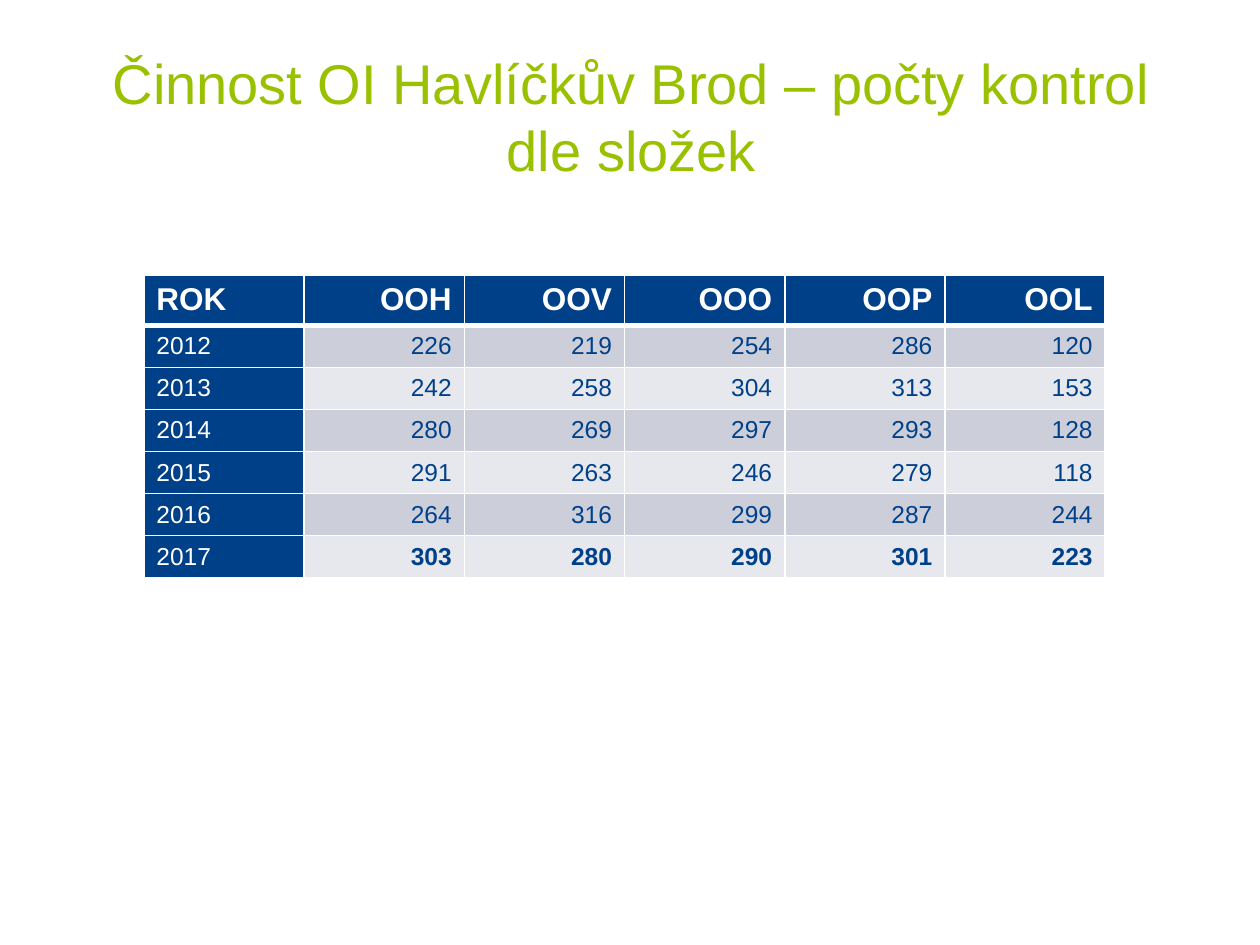
from lxml import etree
from pptx import Presentation
from pptx.dml.color import RGBColor
from pptx.enum.text import MSO_ANCHOR, PP_ALIGN
from pptx.oxml.ns import qn
from pptx.util import Cm, Pt

MIDDLE = MSO_ANCHOR.MIDDLE
LEFT, CENTER, RIGHT = PP_ALIGN.LEFT, PP_ALIGN.CENTER, PP_ALIGN.RIGHT

GREEN = RGBColor(0x99, 0xC1, 0x00)
BLUE = RGBColor(0x00, 0x40, 0x89)
WHITE = RGBColor(0xFF, 0xFF, 0xFF)
DARK_BAND = RGBColor(0xCC, 0xCF, 0xDA)
LIGHT_BAND = RGBColor(0xE7, 0xE8, 0xED)

INSPECTIONS = [
    ("ROK", "OOH", "OOV", "OOO", "OOP", "OOL"),
    ("2012", "226", "219", "254", "286", "120"),
    ("2013", "242", "258", "304", "313", "153"),
    ("2014", "280", "269", "297", "293", "128"),
    ("2015", "291", "263", "246", "279", "118"),
    ("2016", "264", "316", "299", "287", "244"),
    ("2017", "303", "280", "290", "301", "223"),
]
ROW_COUNT, COLUMN_COUNT = len(INSPECTIONS), len(INSPECTIONS[0])
LAST_ROW = ROW_COUNT - 1
COLUMN_WIDTH, ROW_HEIGHT = Cm(3.23), Cm(0.76)


def style_text(paragraph, size, color, alignment, bold=False):
    paragraph.alignment = alignment
    paragraph.font.name = "Arial"
    paragraph.font.size = Pt(size)
    paragraph.font.bold = bold
    paragraph.font.color.rgb = color


def set_borders(cell, widths):
    """Draw white cell borders; widths maps an edge tag to points."""
    properties = cell._tc.get_or_add_tcPr()
    for position, (edge, width) in enumerate(widths.items()):
        line = etree.Element(qn(edge), w=str(Pt(width)))
        fill = etree.SubElement(line, qn("a:solidFill"))
        etree.SubElement(fill, qn("a:srgbClr"), val=str(WHITE))
        properties.insert(position, line)


presentation = Presentation()
presentation.slide_width, presentation.slide_height = Cm(25.4), Cm(19.05)
slide = presentation.slides.add_slide(presentation.slide_layouts[6])

title = slide.shapes.add_textbox(Cm(1.3), Cm(0.74), Cm(22.86), Cm(3.18))
title.text_frame.word_wrap = True
title.text_frame.vertical_anchor = MIDDLE
title.text_frame.text = "Činnost OI Havlíčkův Brod – počty kontrol dle složek"
style_text(title.text_frame.paragraphs[0], 32, GREEN, CENTER)

table = slide.shapes.add_table(
    ROW_COUNT, COLUMN_COUNT, Cm(2.9), Cm(5.54),
    COLUMN_WIDTH * COLUMN_COUNT, ROW_HEIGHT * ROW_COUNT,
).table
for column in table.columns:
    column.width = COLUMN_WIDTH
for row in table.rows:
    row.height = ROW_HEIGHT

for row_index, values in enumerate(INSPECTIONS):
    is_header = row_index == 0
    band = DARK_BAND if row_index % 2 else LIGHT_BAND
    for column_index, value in enumerate(values):
        is_year = column_index == 0
        on_blue = is_header or is_year
        cell = table.cell(row_index, column_index)
        cell.text = value
        cell.vertical_anchor = MIDDLE
        cell.fill.solid()
        cell.fill.fore_color.rgb = BLUE if on_blue else band
        style_text(
            cell.text_frame.paragraphs[0],
            18 if is_header else 14,
            WHITE if on_blue else BLUE,
            LEFT if is_year else RIGHT,
            bold=is_header or (row_index == LAST_ROW and not is_year),
        )
        set_borders(cell, {
            "a:lnL": 1,
            "a:lnR": 1,
            "a:lnT": 3 if row_index == 1 else 1,
            "a:lnB": 3 if is_header else 1,
        })

presentation.save("out.pptx")
